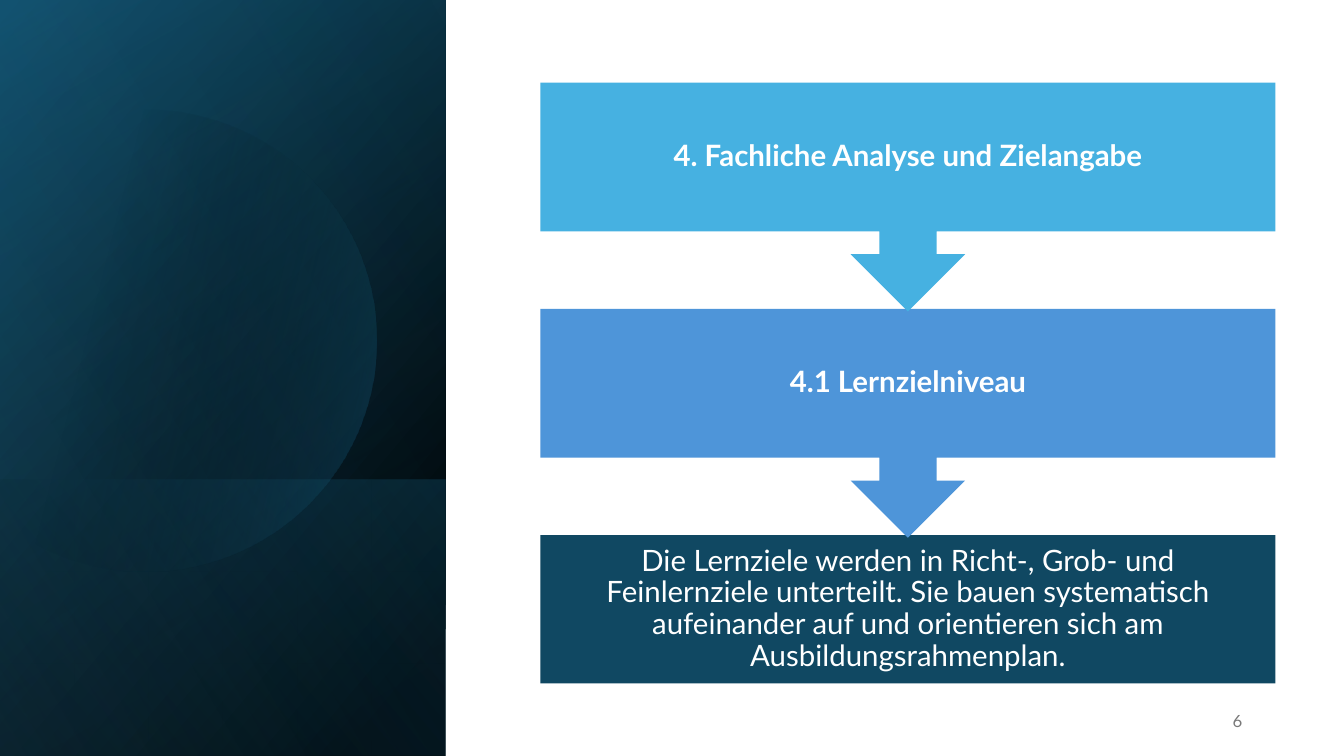
from dataclasses import dataclass
from math import cos, radians, sin

from pptx import Presentation
from pptx import util as u
from pptx.dml.color import RGBColor
from pptx.enum import shapes, text
from pptx.oxml import parse_xml
from pptx.oxml.ns import nsdecls, qn


@dataclass(frozen=True)
class Theme:
    font: str = "Lato"
    black: str = "000000"
    white: str = "FFFFFF"
    navy: str = "104862"
    teal: str = "156082"
    sky: str = "46B1E1"
    blue: str = "4E95D9"
    grey: str = "797979"
    step_size: int = 21
    number_size: int = 12


THEME = Theme()


def add_text(tf, wording, size, color, align, bold=False):
    tf.word_wrap = True
    tf.vertical_anchor = text.MSO_ANCHOR.MIDDLE
    p = tf.paragraphs[0]
    p.alignment = align
    r = p.add_run()
    r.text = wording
    r.font.name = THEME.font
    r.font.size = u.Pt(size)
    r.font.bold = bold
    r.font.color.rgb = RGBColor.from_string(color)
    return p


def fill_gradient(sp, angle, *stops):
    sp.shadow.inherit = False
    sp.line.fill.background()
    sp.fill.gradient()
    sp.fill.gradient_angle = 360 - angle
    for stop, (position, color, opacity) in zip(sp.fill.gradient_stops, stops):
        stop.position = position / 100
        stop.color.rgb = RGBColor.from_string(color)
    colors = sp._element.spPr.iter(qn("a:srgbClr"))
    for element, (position, color, opacity) in zip(colors, stops):
        element.append(parse_xml(f'<a:alpha {nsdecls("a")} val="{opacity * 1000}"/>'))


def add_panel(s, left, top, width, height, angle, *stops):
    sp = s.shapes.add_shape(
        shapes.MSO_SHAPE.RECTANGLE,
        u.Inches(left), u.Inches(top), u.Inches(width), u.Inches(height))
    fill_gradient(sp, angle, *stops)


def add_disc(s, center_x, center_y, radius, half_arc):
    points = [(u.Inches(center_x + radius * cos(radians(a))),
               u.Inches(center_y + radius * sin(radians(a))))
              for a in range(-half_arc, half_arc + 1, 3)]
    builder = s.shapes.build_freeform(*points[0])
    builder.add_line_segments(points[1:], close=True)
    fill_gradient(builder.convert_to_shape(), 14,
                  (29, THEME.black, 0), (100, THEME.teal, 43))


def add_side_panel(s, left, top, width, height):
    strip = 2.74
    box = left, top, width, height
    add_panel(s, *box, 220, (8, THEME.black, 100), (100, THEME.navy, 100))
    add_panel(s, *box, 240, (0, THEME.black, 0), (99, THEME.teal, 46))
    add_panel(s, left, top + height - strip, width, strip, 140,
              (2, THEME.teal, 29), (100, THEME.black, 30))
    add_disc(s, left + 1.44, top + 3.38, 2.29, 129)
    add_panel(s, *box, 150, (0, THEME.black, 0), (99, THEME.sky, 11))


def add_steps(s, left, top, width, height):
    box_height, callout_height = 1.47, 2.27
    steps = [
        ("4. Fachliche Analyse und Zielangabe", THEME.sky),
        ("4.1 Lernzielniveau", THEME.blue),
        ("Die Lernziele werden in Richt-, Grob- und Feinlernziele unterteilt. "
         "Sie bauen systematisch aufeinander auf und orientieren sich am "
         "Ausbildungsrahmenplan.", THEME.navy),
    ]
    last = len(steps) - 1
    pitch = (height - box_height) / last
    for i, (wording, color) in reversed(list(enumerate(steps))):
        is_last = i == last
        kind = (shapes.MSO_SHAPE.RECTANGLE if is_last
                else shapes.MSO_SHAPE.DOWN_ARROW_CALLOUT)
        sp = s.shapes.add_shape(
            kind, u.Inches(left), u.Inches(top + i * pitch), u.Inches(width),
            u.Inches(box_height if is_last else callout_height))
        sp.shadow.inherit = False
        sp.fill.solid()
        sp.fill.fore_color.rgb = RGBColor.from_string(color)
        sp.line.fill.background()
        tf = sp.text_frame
        tf.margin_left = tf.margin_right = u.Inches(0.2)
        tf.margin_top = tf.margin_bottom = u.Inches(0.1)
        p = add_text(tf, wording, THEME.step_size, THEME.white,
                     text.PP_ALIGN.CENTER, bold=not is_last)
        p.line_spacing = 0.9


def add_slide_number(s, left, top, width, height):
    sp = s.shapes.add_textbox(
        u.Inches(left), u.Inches(top), u.Inches(width), u.Inches(height))
    add_text(sp.text_frame, "6", THEME.number_size, THEME.grey, text.PP_ALIGN.RIGHT)


def main():
    prs = Presentation()
    prs.slide_width, prs.slide_height = u.Inches(13.33), u.Inches(7.5)
    s = prs.slides.add_slide(prs.slide_layouts[6])
    add_side_panel(s, 0, 0, 4.42, 7.5)
    add_steps(s, 5.36, 0.82, 7.29, 5.96)
    add_slide_number(s, 9.42, 6.95, 3, 0.4)
    prs.save("out.pptx")


if __name__ == "__main__":
    main()
